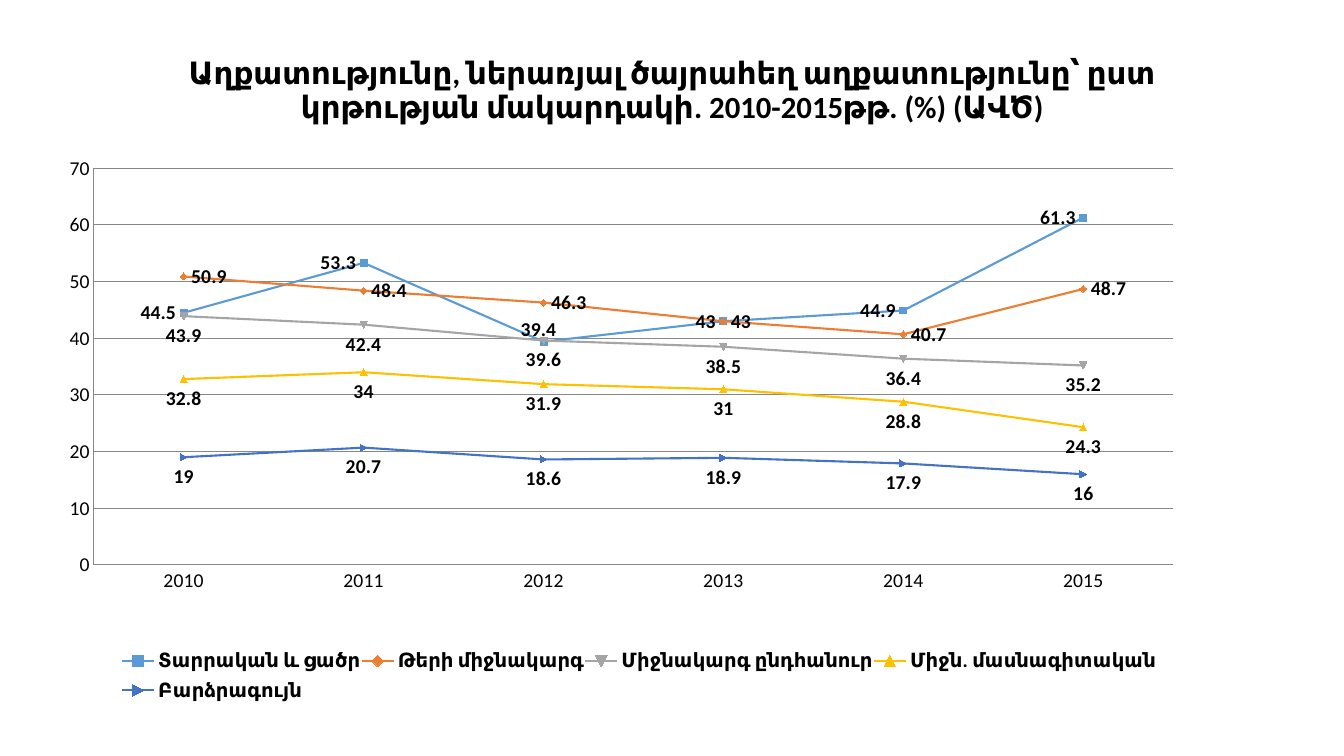
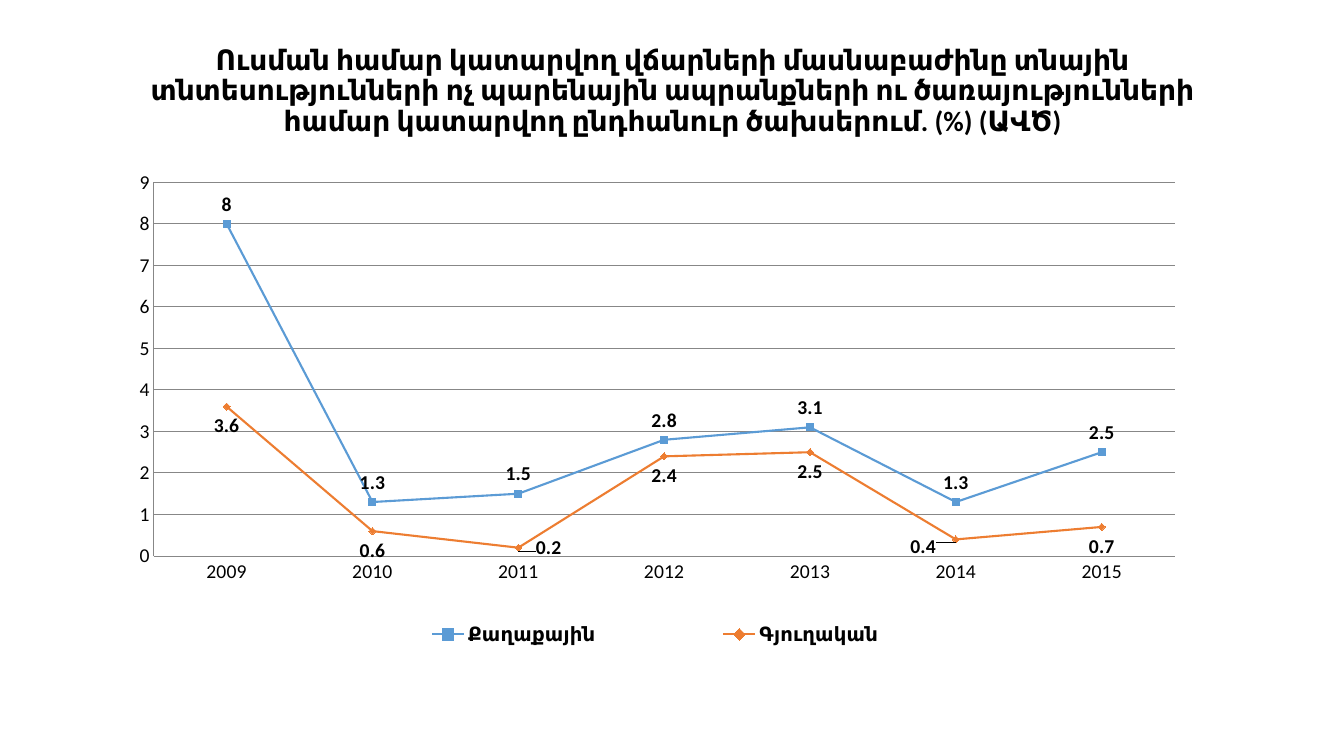
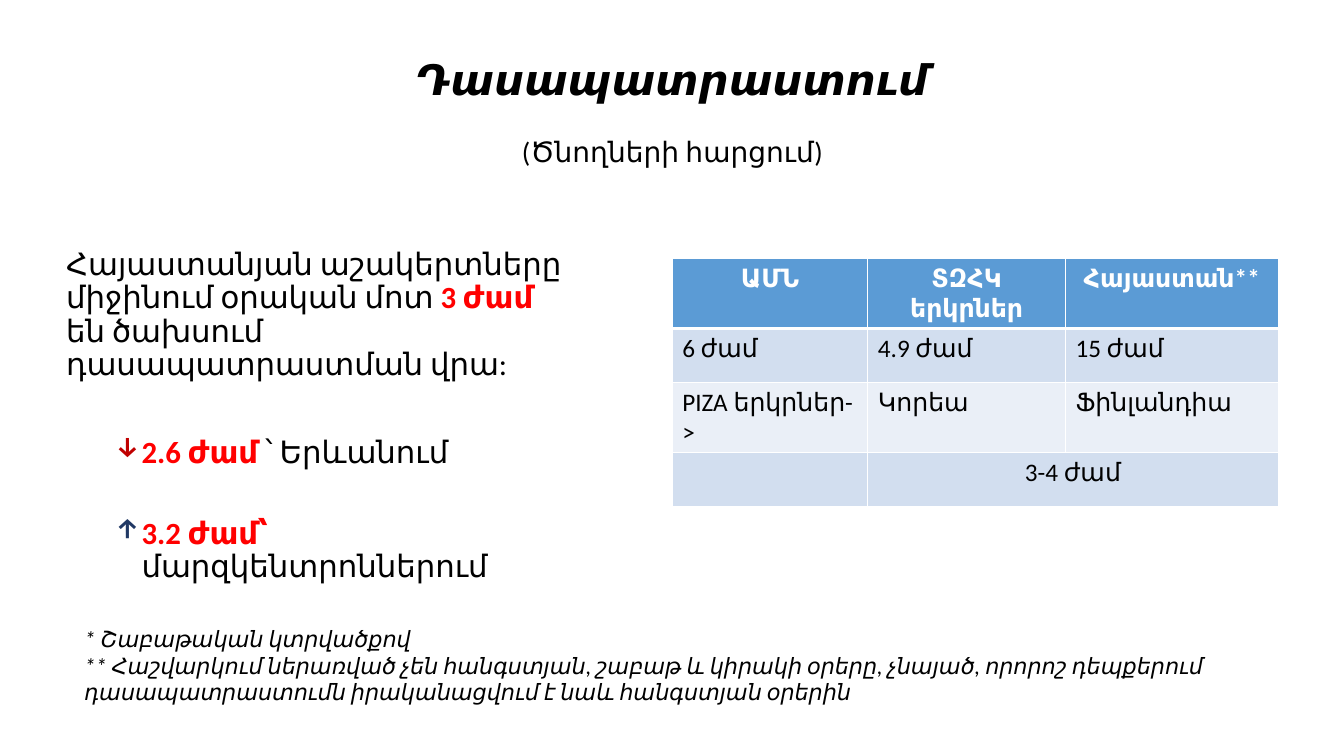
from lxml import etree
from pptx import Presentation
from pptx.chart.data import CategoryChartData
from pptx.dml.color import RGBColor
from pptx.enum.chart import XL_CHART_TYPE, XL_LABEL_POSITION, XL_LEGEND_POSITION, XL_TICK_MARK
from pptx.enum.text import MSO_ANCHOR, MSO_AUTO_SIZE, PP_ALIGN
from pptx.oxml.ns import qn
from pptx.util import Cm, Pt

LEFT, RIGHT = XL_LABEL_POSITION.LEFT, XL_LABEL_POSITION.RIGHT
ABOVE, BELOW = XL_LABEL_POSITION.ABOVE, XL_LABEL_POSITION.BELOW
LINE_MARKERS = XL_CHART_TYPE.LINE_MARKERS
BOTTOM = XL_LEGEND_POSITION.BOTTOM
NO_TICK = XL_TICK_MARK.NONE
CENTER = PP_ALIGN.CENTER
MIDDLE = MSO_ANCHOR.MIDDLE
NO_AUTOFIT = MSO_AUTO_SIZE.NONE

FONT = "Calibri"
BLACK = RGBColor(0x00, 0x00, 0x00)
WHITE = RGBColor(0xFF, 0xFF, 0xFF)
RED = RGBColor(0xFF, 0x00, 0x00)
DARK_RED = RGBColor(0xC0, 0x00, 0x00)
NAVY = RGBColor(0x20, 0x38, 0x64)
GRID_GRAY = RGBColor(0x87, 0x87, 0x87)
BLUE = RGBColor(0x5B, 0x9B, 0xD5)
ORANGE = RGBColor(0xED, 0x7D, 0x31)
GRAY = RGBColor(0xA5, 0xA5, 0xA5)
YELLOW = RGBColor(0xFF, 0xC0, 0x00)
DARK_BLUE = RGBColor(0x44, 0x72, 0xC4)
BAND_DARK = RGBColor(0xD2, 0xDE, 0xEF)
BAND_LIGHT = RGBColor(0xEA, 0xEF, 0xF7)
SERIES_COLORS = [BLUE, ORANGE, GRAY, YELLOW, DARK_BLUE]


def write(paragraph, text, size=18, color=BLACK, bold=False, italic=False):
    run = paragraph.add_run()
    run.text = text
    font = run.font
    font.name, font.size, font.bold, font.italic = FONT, Pt(size), bold, italic
    font.color.rgb = color


def set_layout(parent, index, **settings):
    """Give a chart part a manual layout, as fractions of the chart."""
    for old in parent.findall(qn("c:layout")):
        parent.remove(old)
    layout = etree.Element(qn("c:layout"))
    manual = etree.SubElement(layout, qn("c:manualLayout"))
    for tag, value in settings.items():
        etree.SubElement(manual, qn("c:" + tag)).set("val", str(value))
    parent.insert(index, layout)


prs = Presentation()
prs.slide_width, prs.slide_height = Cm(33.87), Cm(19.05)

# Slides and titles: height in cm, then paragraphs as (text, format)
titles = [
    (2.57, [("Աղքատությունը, ներառյալ ծայրահեղ աղքատությունը՝ ըստ կրթության "
             "մակարդակի. 2010-2015թթ. (%) (ԱՎԾ)", dict(size=22, bold=True))]),
    (2.59, [("Ուսման համար կատարվող վճարների մասնաբաժինը տնային տնտեսությունների "
             "ոչ պարենային ապրանքների ու ծառայությունների համար կատարվող ընդհանուր "
             "ծախսերում. (%) (ԱՎԾ)", dict(size=20, bold=True))]),
    (3.68, [("Դասապատրաստում", dict(size=30, bold=True, italic=True)),
            ("(Ծնողների հարցում)", dict(size=20))]),
]
slides = []
for height, lines in titles:
    slide = prs.slides.add_slide(prs.slide_layouts[5])
    title = slide.shapes.title
    title.left, title.top, title.width, title.height = Cm(2.34), Cm(1.02), Cm(29.21), Cm(height)
    frame = title.text_frame
    frame.auto_size = NO_AUTOFIT
    frame.vertical_anchor = MIDDLE
    for i, (text, style) in enumerate(lines):
        paragraph = frame.add_paragraph() if i else frame.paragraphs[0]
        paragraph.alignment = CENTER
        paragraph.line_spacing = 0.9
        paragraph.space_before = Pt(24 if i else 0)
        write(paragraph, text, **style)
    slides.append(slide)

# Line charts: series are (name, values, label position),
# moved labels are (series, point, x shift, y shift)
charts = [
    dict(
        box=(1.42, 3.86, 28.55, 14.12), top=70, step=10,
        plot=(0.033, 0.027, 0.953, 0.708), legend=(0.057, 0.875, 0.915, 0.115),
        years=range(2010, 2016),
        series=[
            ("Տարրական և ցածր", (44.5, 53.3, 39.4, 43, 44.9, 61.3), LEFT),
            ("Թերի միջնակարգ", (50.9, 48.4, 46.3, 43, 40.7, 48.7), RIGHT),
            ("Միջնակարգ ընդհանուր", (43.9, 42.4, 39.6, 38.5, 36.4, 35.2), BELOW),
            ("Միջն. մասնագիտական", (32.8, 34, 31.9, 31, 28.8, 24.3), BELOW),
            ("Բարձրագույն", (19, 20.7, 18.6, 18.9, 17.9, 16), BELOW),
        ],
        moved=[(0, 2, 0.018, -0.021)],
    ),
    dict(
        box=(2.34, 3.89, 28.4, 14.4), top=9, step=1,
        plot=(0.054, 0.049, 0.906, 0.654), legend=(0.193, 0.8, 0.612, 0.08),
        years=range(2009, 2016),
        series=[
            ("Քաղաքային", (8, 1.3, 1.5, 2.8, 3.1, 1.3, 2.5), ABOVE),
            ("Գյուղական", (3.6, 0.6, 0.2, 2.4, 2.5, 0.4, 0.7), BELOW),
        ],
        moved=[(1, 2, 0.027, -0.034), (1, 5, -0.029, -0.021)],
    ),
]
for slide, content in zip(slides, charts):
    data = CategoryChartData()
    data.categories = [str(year) for year in content["years"]]
    for name, values, _ in content["series"]:
        data.add_series(name, values)
    box = [Cm(length) for length in content["box"]]
    chart = slide.shapes.add_chart(LINE_MARKERS, *box, data).chart
    chart.has_title = False
    chart.font.name, chart.font.size = FONT, Pt(10)
    chart.font.color.rgb = BLACK

    # Axes and gridlines
    value_axis = chart.value_axis
    value_axis.minimum_scale, value_axis.maximum_scale = 0, content["top"]
    value_axis.major_unit = content["step"]
    value_axis.has_major_gridlines = True
    for axis in (chart.category_axis, value_axis):
        axis.major_tick_mark = axis.minor_tick_mark = NO_TICK
        axis.tick_labels.font.size = Pt(14)
    for ruled in (chart.category_axis, value_axis, value_axis.major_gridlines):
        ruled.format.line.color.rgb = GRID_GRAY
        ruled.format.line.width = Pt(0.75)

    # Legend and plot area
    chart.has_legend = True
    legend = chart.legend
    legend.position = BOTTOM
    legend.include_in_layout = False
    legend.font.size, legend.font.bold = Pt(14), True
    x, y, w, h = content["legend"]
    set_layout(legend._element, 1, xMode="edge", yMode="edge", x=x, y=y, w=w, h=h)
    x, y, w, h = content["plot"]
    plot_area = chart._chartSpace.chart.plotArea
    set_layout(plot_area, 0, layoutTarget="inner", xMode="edge", yMode="edge", x=x, y=y, w=w, h=h)

    # Lines, markers and value labels
    plot = chart.plots[0]
    plot.vary_by_categories = False
    for line, color, (_, _, position) in zip(plot.series, SERIES_COLORS, content["series"]):
        line.smooth = False
        line.format.line.color.rgb = color
        line.format.line.width = Pt(1.5)
        line.marker.size = 5
        line.marker.format.fill.solid()
        line.marker.format.fill.fore_color.rgb = color
        line.marker.format.line.color.rgb = color
        labels = line.data_labels
        labels.show_value = True
        labels.position = position
        labels.font.size, labels.font.bold = Pt(14), True
    for line_index, point, dx, dy in content["moved"]:
        line = plot.series[line_index]
        label = line.points[point].data_label
        label.font.size, label.font.bold = Pt(14), True
        label.position = content["series"][line_index][2]
        element = line._element.xpath(f'c:dLbls/c:dLbl[c:idx/@val="{point}"]')[0]
        set_layout(element, 1, x=dx, y=dy)

# Homework findings: space before, bullet, bullet colour, runs
homework = slides[2]
findings = [
    (0, None, None, [("Հայաստանյան աշակերտները միջինում օրական մոտ ", False),
                     ("3 ժամ ", True), ("են ծախսում դասապատրաստման վրա:", False)]),
    (39, "↓", DARK_RED, [("2.6 ժամ ", True), ("՝ Երևանում", False)]),
    (34, "↑", NAVY, [("3.2 ժամ՝ ", True), ("մարզկենտրոններում", False)]),
]
findings_frame = homework.shapes.add_textbox(Cm(1.42), Cm(6.15), Cm(13.36), Cm(10.64)).text_frame
findings_frame.word_wrap = True
for i, (space, bullet, bullet_color, runs) in enumerate(findings):
    paragraph = findings_frame.add_paragraph() if i else findings_frame.paragraphs[0]
    if bullet:
        paragraph.level = 1
        properties = paragraph._p.get_or_add_pPr()
        properties.set("marL", str(Cm(1.9)))
        properties.set("indent", str(-Cm(0.64)))
        color_element = etree.SubElement(properties, qn("a:buClr"))
        etree.SubElement(color_element, qn("a:srgbClr")).set("val", str(bullet_color))
        etree.SubElement(properties, qn("a:buChar")).set("char", bullet)
    paragraph.line_spacing = 0.9
    paragraph.space_before = Pt(space)
    for text, strong in runs:
        write(paragraph, text, size=22, color=RED if strong else BLACK, bold=strong)

# Comparison of countries
rows = [
    ("ԱՄՆ", "ՏԶՀԿ երկրներ", "Հայաստան**"),
    ("6 ժամ", "4.9 ժամ", "15 ժամ"),
    ("PIZA երկրներ->", "Կորեա", "Ֆինլանդիա"),
    ("", "3-4 ժամ", ""),
]
row_fills = [BLUE, BAND_DARK, BAND_LIGHT, BAND_DARK]
countries = homework.shapes.add_table(4, 3, Cm(16.94), Cm(6.5), Cm(15.27), Cm(6.02)).table
for column, width in zip(countries.columns, (4.93, 4.98, 5.36)):
    column.width = Cm(width)
for row, height in zip(countries.rows, (1.68, 1.35, 1.65, 1.35)):
    row.height = Cm(height)
countries.cell(3, 1).merge(countries.cell(3, 2))
for r, texts in enumerate(rows):
    header = r == 0
    for c, text in enumerate(texts):
        cell = countries.cell(r, c)
        cell.fill.solid()
        cell.fill.fore_color.rgb = row_fills[r]
        for i, side in enumerate(("lnL", "lnR", "lnT", "lnB")):
            thick = (header and side == "lnB") or (r == 1 and side == "lnT")
            border = etree.Element(qn("a:" + side), w=str(Pt(3 if thick else 1)))
            solid = etree.SubElement(border, qn("a:solidFill"))
            etree.SubElement(solid, qn("a:srgbClr")).set("val", str(WHITE))
            cell._tc.get_or_add_tcPr().insert(i, border)
        if text:
            paragraph = cell.text_frame.paragraphs[0]
            if header or r == 3:
                paragraph.alignment = CENTER
            write(paragraph, text, color=WHITE if header else BLACK, bold=header)

# Footnotes
footnotes = [
    "* Շաբաթական կտրվածքով",
    "** Հաշվարկում ներառված չեն հանգստյան, շաբաթ և կիրակի օրերը, չնայած, որորոշ "
    "դեպքերում դասապատրաստումն իրականացվում է նաև հանգստյան օրերին",
]
notes_frame = homework.shapes.add_textbox(Cm(1.88), Cm(15.62), Cm(30.1), Cm(2.31)).text_frame
notes_frame.word_wrap = True
for i, text in enumerate(footnotes):
    paragraph = notes_frame.add_paragraph() if i else notes_frame.paragraphs[0]
    write(paragraph, text, size=16, italic=True)

prs.save("out.pptx")
